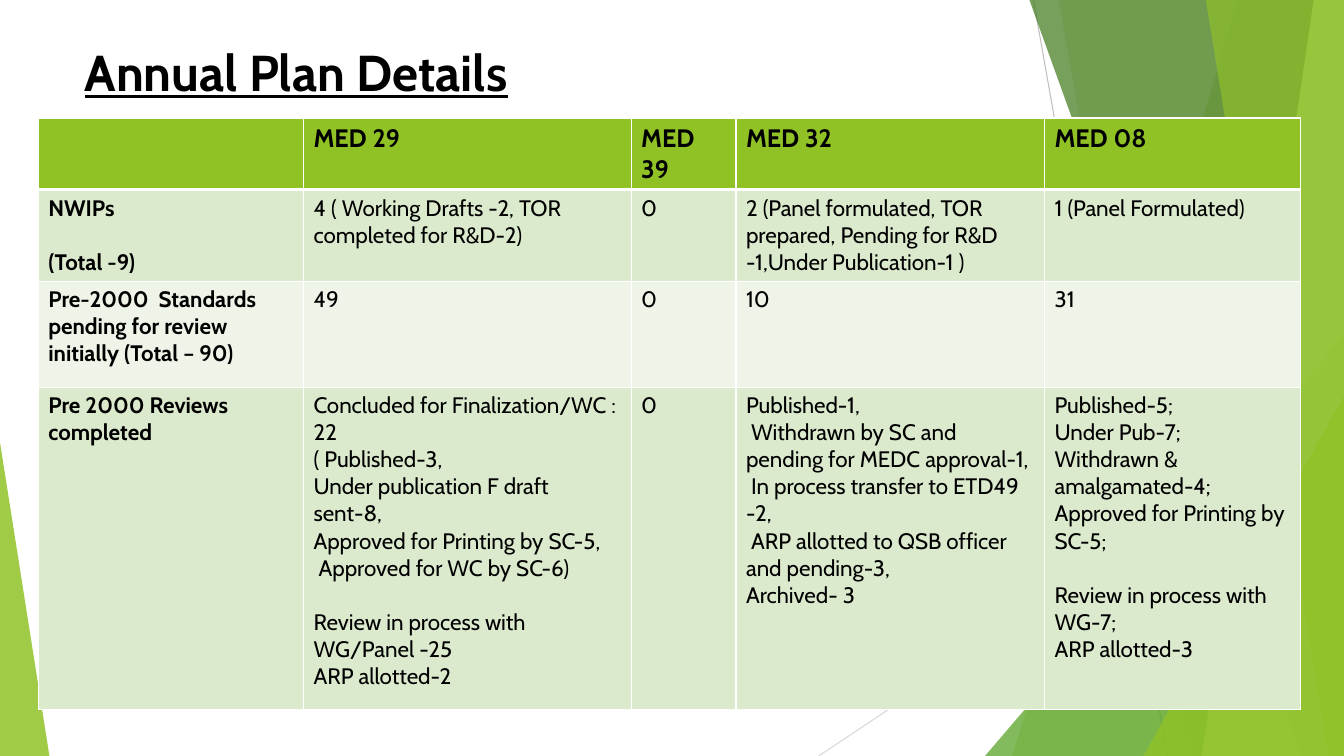
"""Builds the Annual Plan Details slide."""
from dataclasses import dataclass

from lxml.etree import SubElement
from pptx import Presentation
from pptx.dml.color import RGBColor as RGB
from pptx.enum.shapes import MSO_CONNECTOR as CONN, MSO_SHAPE as SHAPE
from pptx.enum.text import MSO_ANCHOR as ANCHOR, MSO_AUTO_SIZE as FIT, PP_ALIGN as ALIGN
from pptx.oxml.ns import qn
from pptx.util import Pt

PX = 9144
W, H = 1333, 750


@dataclass(frozen=True)
class Theme:
    """Font, colours and type sizes."""
    font: str = "Cabin"
    text: str = "000000"
    white: str = "FFFFFF"
    lime: str = "90C226"
    green: str = "54A021"
    forest: str = "3F7819"
    pale: str = "C0E474"
    gray: str = "BFBFBF"
    light_gray: str = "D9D9D9"
    band_dark: str = "DBE9CD"
    band_light: str = "EEF4E8"
    title: int = 36
    head: int = 18
    body: int = 16
    gap: float = 19.3


class Deck:
    """Draws elements on the current slide in one style."""

    def __init__(self, theme):
        self.t = theme
        self.prs = Presentation()
        self.prs.slide_width, self.prs.slide_height = W * PX, H * PX
        self.s = self.prs.slides.add_slide(self.prs.slide_layouts[5])

    def run(self, p, text, size, bold=False, underline=False):
        """Adds one styled run."""
        r = p.add_run()
        r.text = text
        f = r.font
        f.name, f.size, f.bold, f.underline = self.t.font, Pt(size), bold, underline
        f.color.rgb = RGB.from_string(self.t.text)

    def title(self, text, x, y, w, h):
        """Places and fills the title placeholder."""
        sp = self.s.shapes.title
        sp.left, sp.top, sp.width, sp.height = (v * PX for v in (x, y, w, h))
        tf = sp.text_frame
        tf.word_wrap, tf.auto_size = True, FIT.NONE
        tf.vertical_anchor = ANCHOR.MIDDLE
        p = tf.paragraphs[0]
        p.alignment = ALIGN.LEFT
        self.run(p, text, self.t.title, bold=True, underline=True)

    def line(self, x1, y1, x2, y2, color):
        """Draws a thin straight line."""
        c = self.s.shapes.add_connector(CONN.STRAIGHT, *(v * PX for v in (x1, y1, x2, y2)))
        c.line.color.rgb, c.line.width = RGB.from_string(color), Pt(0.75)
        SubElement(c._element.spPr, qn("a:effectLst"))

    def tint(self, sp, color, opacity):
        """Gives a shape a translucent fill without outline or shadow."""
        sp.fill.solid()
        sp.fill.fore_color.rgb = RGB.from_string(color)
        clr = next(sp._element.spPr.iter(qn("a:srgbClr")))
        SubElement(clr, qn("a:alpha"), val=str(opacity * 1000))
        sp.line.fill.background()
        sp.shadow.inherit = False

    def ribbon(self, top_x, bottom_x, color, opacity):
        """Draws a slanted band that runs to the right edge."""
        fb = self.s.shapes.build_freeform(top_x, 0, scale=PX)
        fb.add_line_segments([(W, 0), (W, H), (bottom_x, H)], close=True)
        self.tint(fb.convert_to_shape(), color, opacity)

    def triangle(self, x, y, w, h, apex, color, opacity):
        """Draws a triangle with its apex at the given fraction."""
        sp = self.s.shapes.add_shape(SHAPE.ISOSCELES_TRIANGLE, *(v * PX for v in (x, y, w, h)))
        sp.adjustments[0] = apex
        self.tint(sp, color, opacity)

    def cell(self, cell, lines, size, bold, fill, top, bottom):
        """Fills one cell; an empty line becomes space before the next."""
        pr = cell._tc.get_or_add_tcPr()
        for side, width in (("L", 1), ("R", 1), ("T", top), ("B", bottom)):
            ln = SubElement(pr, qn(f"a:ln{side}"), w=str(Pt(width)))
            SubElement(SubElement(ln, qn("a:solidFill")), qn("a:srgbClr"), val=self.t.white)
        cell.fill.solid()
        cell.fill.fore_color.rgb = RGB.from_string(fill)
        tf = cell.text_frame
        p, space = tf.paragraphs[0], 0
        for i, text in enumerate(lines):
            if not text:
                space = self.t.gap
                continue
            p = tf.add_paragraph() if i else p
            if space:
                p.space_before, space = Pt(space), 0
            self.run(p, text, size, bold)

    def table(self, x, y, cols, heights, rows):
        """Draws a banded table with a header row and a bold first column."""
        box = (v * PX for v in (x, y, sum(cols), sum(heights)))
        tbl = self.s.shapes.add_table(len(rows), len(cols), *box).table
        for col, w in zip(tbl.columns, cols):
            col.width = w * PX
        for i, (row, h) in enumerate(zip(rows, heights)):
            tbl.rows[i].height = h * PX
            band = self.t.band_dark if i % 2 else self.t.band_light
            for j, text in enumerate(row):
                self.cell(tbl.cell(i, j), text.split("\n") if text else [],
                          self.t.body if i else self.t.head, i == 0 or j == 0,
                          band if i else self.t.lime,
                          3 if i == 1 else 1, 1 if i else 3)


PLAN = [
    ["", "MED 29", "MED 39", "MED 32", "MED 08"],
    ["NWIPs\n\n(Total -9)",
     "4 ( Working Drafts -2, TOR completed for R&D-2)",
     "0",
     "2 (Panel formulated, TOR prepared, Pending for R&D -1,Under Publication-1 )",
     "1 (Panel Formulated)"],
    ["Pre-2000  Standards pending for review initially (Total – 90)", "49", "0", "10", "31"],
    ["Pre 2000 Reviews completed",
     "Concluded for Finalization/WC : 22\n( Published-3,\nUnder publication F draft sent-8,\n"
     "Approved for Printing by SC-5,\n Approved for WC by SC-6)\n\n"
     "Review in process with WG/Panel -25\nARP allotted-2",
     "0",
     "Published-1,\n Withdrawn by SC and pending for MEDC approval-1,\n"
     " In process transfer to ETD49 -2,\n ARP allotted to QSB officer and pending-3,\n"
     "Archived- 3",
     "Published-5;\nUnder Pub-7;\nWithdrawn & amalgamated-4;\n"
     "Approved for Printing by SC-5;\n\nReview in process with WG-7;\nARP allotted-3"],
]


def main():
    """Draws the slide and saves it."""
    t = Theme()
    d = Deck(t)
    d.line(1025, 0, 1158, H, t.gray)
    d.line(W, 403, 812, H, t.light_gray)
    d.ribbon(1228, 1004, t.lime, 30)
    d.ribbon(1050, 1183, t.lime, 20)
    d.triangle(977, 333, 356, 417, 1, t.green, 72)
    d.ribbon(1021, 1291, t.forest, 70)
    d.ribbon(1303, 1192, t.pale, 70)
    d.ribbon(1196, 1318, t.lime, 65)
    d.triangle(1134, 393, 199, 357, 1, t.lime, 80)
    d.triangle(0, 439, 49, 311, 0, t.lime, 85)
    d.title("Annual Plan Details", 74, 33, 940, 75)
    d.table(38, 117, [263, 325, 104, 306, 254], [70, 91, 105, 320], PLAN)
    d.prs.save("out.pptx")


if __name__ == "__main__":
    main()
